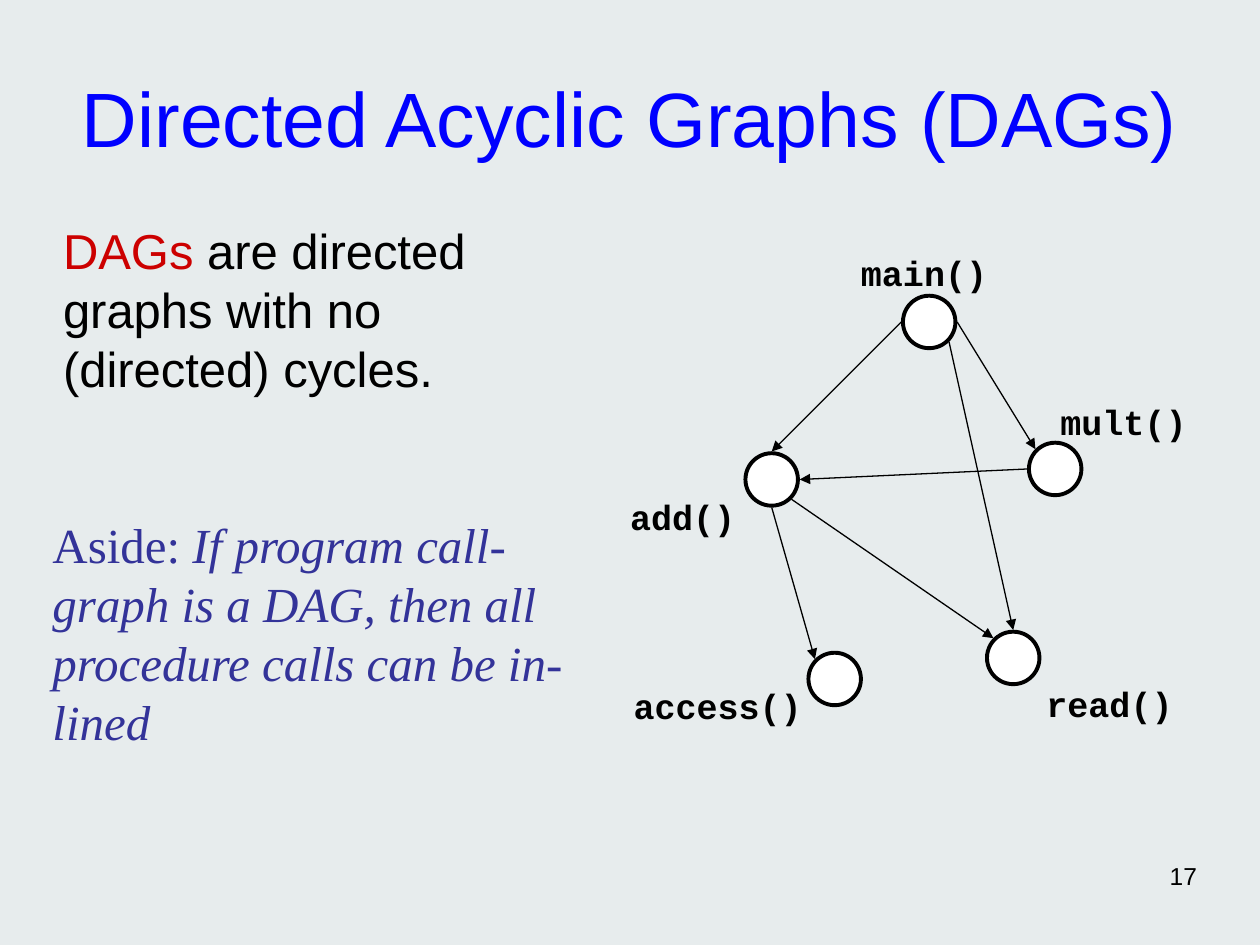
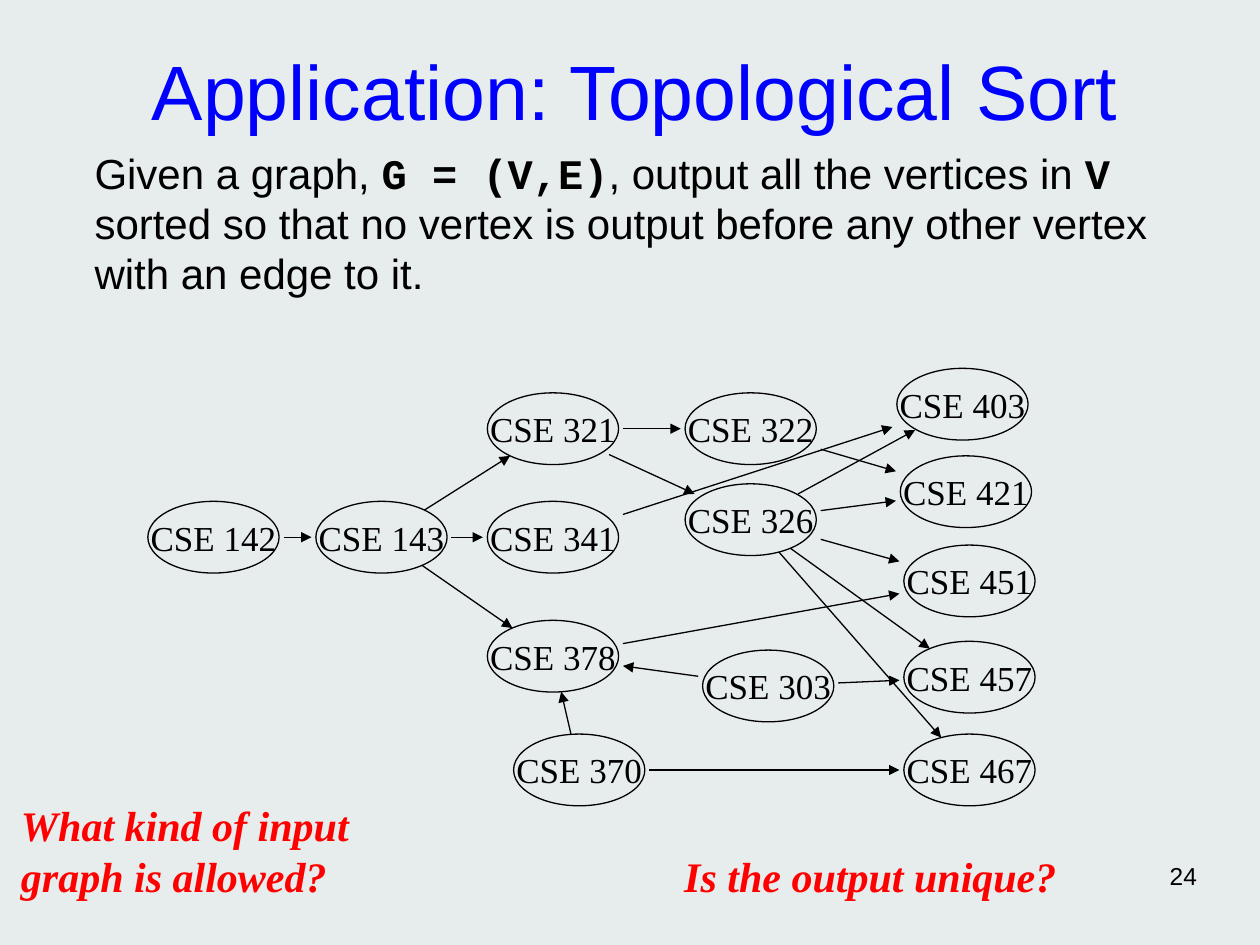
import dataclasses
import math

import lxml.etree
import pptx
import pptx.dml.color
import pptx.enum.shapes
import pptx.enum.text
import pptx.oxml.ns
import pptx.util

Pt = pptx.util.Pt
Align = pptx.enum.text.PP_ALIGN
Anchor = pptx.enum.text.MSO_ANCHOR


@dataclasses.dataclass(frozen=True)
class Theme:
    background: str = "E7ECED"
    title: str = "0000FF"
    ink: str = "000000"
    node: str = "FFFFFF"
    term: str = "CC0000"
    aside: str = "333399"
    question: str = "FF0000"
    sans: str = "Arial"
    serif: str = "Times New Roman"
    mono: str = "Courier New"
    title_size: int = 44
    large_size: int = 28
    medium_size: int = 24
    label_size: int = 20
    number_size: int = 14
    thick_line: float = 2.25
    thin_line: float = 0.75


@dataclasses.dataclass(frozen=True)
class Style:
    font: str
    size: int
    color: str
    bold: bool = False
    italic: bool = False


THEME = Theme()
TITLE = Style(THEME.sans, THEME.title_size, THEME.title)
NUMBER = Style(THEME.sans, THEME.number_size, THEME.ink)
BODY_LARGE = Style(THEME.sans, THEME.large_size, THEME.ink)
TERM = dataclasses.replace(BODY_LARGE, color=THEME.term)
BODY = Style(THEME.sans, THEME.medium_size, THEME.ink)
CODE = dataclasses.replace(BODY, font=THEME.mono, bold=True)
FUNCTION = Style(THEME.mono, THEME.label_size, THEME.ink, bold=True)
COURSE = Style(THEME.serif, THEME.label_size, THEME.ink)
ASIDE = Style(THEME.serif, THEME.large_size, THEME.aside)
ASIDE_ITALIC = dataclasses.replace(ASIDE, italic=True)
QUESTION = Style(THEME.serif, THEME.medium_size, THEME.question, True, True)

CALL_RADIUS = 15
CALL_REACH = 16
CALLS = {
    "main()": ((171, 40), (132, 0)),
    "add()": ((81, 130), (0, 139)),
    "access()": ((117, 244), (2, 247)),
    "mult()": ((243, 124), (246, 85)),
    "read()": ((219, 232), (238, 246)),
}
CALL_EDGES = [
    ("main()", 180, "add()", 270),
    ("main()", 0, "mult()", 225),
    ("main()", 45, "read()", 270),
    ("add()", 90, "access()", 225),
    ("mult()", 180, "add()", 0),
    ("add()", 45, "read()", 225),
]

COURSE_WIDTH, COURSE_HEIGHT = 75, 41
LABEL_WIDTH, LABEL_HEIGHT = 80, 29.5
COURSES = {
    142: (38, 96), 143: (134, 96), 321: (232, 34), 341: (232, 96),
    378: (232, 164), 326: (345, 86), 370: (247, 229), 403: (466, 20),
    421: (468, 70), 451: (470, 121), 467: (470, 229), 322: (345, 34),
    303: (355, 181), 457: (470, 176),
}
LEADS_TO = {
    142: [143],
    143: [321, 341, 378],
    321: [322, 326],
    322: [421],
    326: [403, 421, 451, 457, 467],
    341: [403],
    378: [451],
    303: [378, 457],
    370: [378, 467],
}


def rgb(color):
    return pptx.dml.color.RGBColor.from_string(color)


def write(shape, paragraphs, align=Align.LEFT, anchor=Anchor.TOP, before=0, wrap=True):
    frame = shape.text_frame
    frame.auto_size = pptx.enum.text.MSO_AUTO_SIZE.NONE
    frame.word_wrap = wrap
    frame.vertical_anchor = anchor
    frame.margin_left = frame.margin_right = frame.margin_top = frame.margin_bottom = 0
    for index, runs in enumerate(paragraphs):
        paragraph = frame.add_paragraph() if index else frame.paragraphs[0]
        paragraph.alignment = align
        paragraph.space_before = Pt(before)
        for text, style in runs:
            run = paragraph.add_run()
            run.text = text
            run.font.name = style.font
            run.font.size = Pt(style.size)
            run.font.bold = style.bold
            run.font.italic = style.italic
            run.font.color.rgb = rgb(style.color)


def add_text(slide, box, paragraphs, **layout):
    shape = slide.shapes.add_textbox(*map(Pt, box))
    write(shape, paragraphs, **layout)


def fill_placeholder(shape, box, runs, **layout):
    shape.left, shape.top, shape.width, shape.height = map(Pt, box)
    write(shape, [runs], **layout)


def add_oval(slide, center, width, height, line_width, fill=None):
    x, y = center
    oval = slide.shapes.add_shape(
        pptx.enum.shapes.MSO_SHAPE.OVAL,
        Pt(x - width / 2), Pt(y - height / 2), Pt(width), Pt(height))
    oval.shadow.inherit = False
    if fill:
        oval.fill.solid()
        oval.fill.fore_color.rgb = rgb(fill)
    else:
        oval.fill.background()
    oval.line.color.rgb = rgb(THEME.ink)
    oval.line.width = Pt(line_width)
    return oval


def add_arrow(slide, start, end):
    arrow = slide.shapes.add_connector(
        pptx.enum.shapes.MSO_CONNECTOR.STRAIGHT, *map(Pt, (*start, *end)))
    arrow.line.color.rgb = rgb(THEME.ink)
    arrow.line.width = Pt(THEME.thin_line)
    qualified = pptx.oxml.ns.qn
    lxml.etree.SubElement(arrow.line._get_or_add_ln(), qualified("a:tailEnd"), type="triangle")
    lxml.etree.SubElement(arrow._element.spPr, qualified("a:effectLst"))


def add_slide(presentation, title, title_box, body_runs, body_box, number):
    slide = presentation.slides.add_slide(presentation.slide_layouts[1])
    fill_placeholder(slide.shapes.title, title_box, [(title, TITLE)],
                     align=Align.CENTER, anchor=Anchor.MIDDLE)
    body = slide.placeholders[1]
    fill_placeholder(body, body_box, body_runs, before=6)
    properties = body.text_frame.paragraphs[0]._p.get_or_add_pPr()
    properties.set("marL", "0")
    properties.set("indent", "0")
    lxml.etree.SubElement(properties, pptx.oxml.ns.qn("a:buNone"))
    add_text(slide, (516, 492, 168, 22), [[(number, NUMBER)]], align=Align.RIGHT)
    return slide


def shift(origin, point):
    return origin[0] + point[0], origin[1] + point[1]


def on_circle(center, degrees):
    angle = math.radians(degrees)
    return shift(center, (CALL_REACH * math.cos(angle), CALL_REACH * math.sin(angle)))


def draw_call_graph(slide, origin):
    centers = {}
    for name, (center, label) in CALLS.items():
        centers[name] = shift(origin, center)
        add_oval(slide, centers[name], 2 * CALL_RADIUS, 2 * CALL_RADIUS,
                 THEME.thick_line, THEME.node)
        add_text(slide, (*shift(origin, label), 12 * len(name) + 8, 30),
                 [[(name, FUNCTION)]], wrap=False)
    for source, leaving, target, arriving in CALL_EDGES:
        add_arrow(slide, on_circle(centers[source], leaving),
                  on_circle(centers[target], arriving))


def course_border(center, toward):
    dx, dy = toward[0] - center[0], toward[1] - center[1]
    label_reach = 1 / max(abs(dx) / (LABEL_WIDTH / 2), abs(dy) / (LABEL_HEIGHT / 2))
    oval_reach = 1 / math.hypot(dx / (COURSE_WIDTH / 2), dy / (COURSE_HEIGHT / 2))
    reach = max(label_reach, oval_reach)
    return shift(center, (dx * reach, dy * reach))


def draw_course_graph(slide, origin):
    centers = {course: shift(origin, center) for course, center in COURSES.items()}
    for course, center in centers.items():
        oval = add_oval(slide, center, COURSE_WIDTH, COURSE_HEIGHT, THEME.thin_line)
        write(oval, [[(f"CSE {course}", COURSE)]],
              align=Align.CENTER, anchor=Anchor.MIDDLE, wrap=False)
    for source, targets in LEADS_TO.items():
        for target in targets:
            start, end = centers[source], centers[target]
            add_arrow(slide, course_border(start, end), course_border(end, start))


def build_dag_slide(presentation):
    slide = add_slide(
        presentation, "Directed Acyclic Graphs (DAGs)", (36, 21.6, 648, 90),
        [("DAGs", TERM), (" are directed graphs with no (directed) cycles.", BODY_LARGE)],
        (36, 126, 273.6, 145.4), "17")
    draw_call_graph(slide, (360, 144))
    add_text(slide, (30, 294, 312, 134), [[
        ("Aside: ", ASIDE),
        ("If program call-graph is a DAG, then all procedure calls can be in-lined",
         ASIDE_ITALIC),
    ]], before=16)


def build_sort_slide(presentation):
    slide = add_slide(
        presentation, "Application: Topological Sort", (54, 18, 618, 66),
        [("Given a graph, ", BODY), ("G = (V,E)", CODE),
         (", output all the vertices in ", BODY), ("V", CODE),
         (" sorted so that no vertex is output before any other vertex "
          "with an edge to it.", BODY)],
        (54, 84, 612, 126), "24")
    draw_course_graph(slide, (84, 211))
    add_text(slide, (391, 486, 221, 33), [[("Is the output unique?", QUESTION)]])
    add_text(slide, (12, 457, 202, 60), [
        [("What kind of input", QUESTION)],
        [("graph is allowed?", QUESTION)],
    ])


def main():
    presentation = pptx.Presentation()
    presentation.slide_width, presentation.slide_height = Pt(720), Pt(540)
    background = presentation.slide_master.background.fill
    background.solid()
    background.fore_color.rgb = rgb(THEME.background)
    build_dag_slide(presentation)
    build_sort_slide(presentation)
    presentation.save("out.pptx")


if __name__ == "__main__":
    main()
